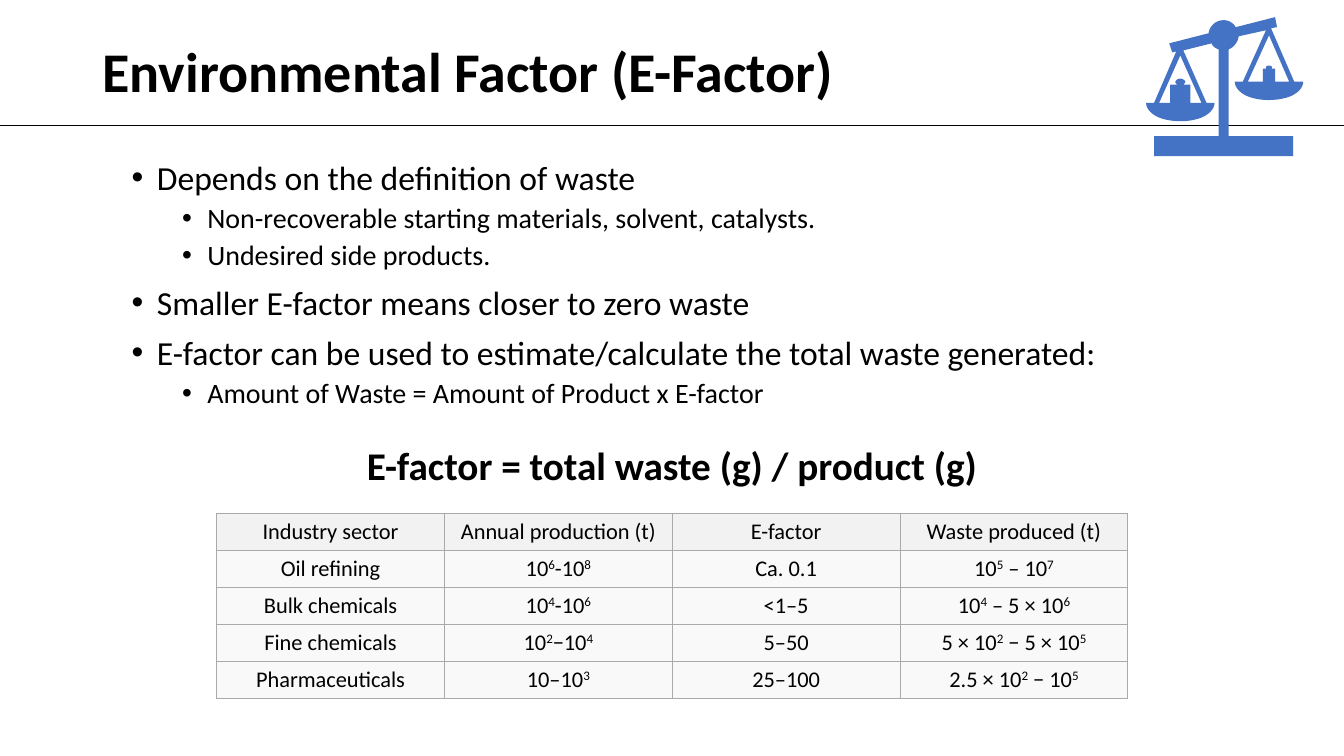
from lxml import etree
from pptx import Presentation
from pptx import util as u
from pptx.dml.color import RGBColor
from pptx.enum import shapes, text
from pptx.oxml.ns import qn

# Content
TITLE = "Environmental Factor (E-Factor)"
FORMULA = "E-factor = total waste (g) / product (g)"
BULLETS = [  # (level, wording)
    (0, "Depends on the definition of waste"),
    (1, "Non-recoverable starting materials, solvent, catalysts."),
    (1, "Undesired side products."),
    (0, "Smaller E-factor means closer to zero waste"),
    (0, "E-factor can be used to estimate/calculate the total waste generated:"),
    (1, "Amount of Waste = Amount of Product x E-factor"),
]
LEVELS = [  # size pt, space before pt, left indent cm
    (24, 10, 0.635),
    (20, 5, 1.905),
]
SECTORS = [  # text between ^ marks is superscript
    ("Industry sector", "Annual production (t)", "E-factor", "Waste produced (t)"),
    ("Oil refining", "10^6^-10^8^", "Ca. 0.1", "10^5^ – 10^7^"),
    ("Bulk chemicals", "10^4^-10^6^", "<1–5", "10^4^ – 5 × 10^6^"),
    ("Fine chemicals", "10^2^−10^4^", "5–50", "5 × 10^2^ − 5 × 10^5^"),
    ("Pharmaceuticals", "10–10^3^", "25–100", "2.5 × 10^2^ − 10^5^"),
]
COLORS = {"ink": "000000", "head": "F2F2F2", "row": "F9F9F9",
          "border": "AAAAAA", "scale": "4472C4"}
FONT = "Calibri"

# Balance scale in inches: pairs are corners, sextets are Bezier curves
FRAME = [
    (12.65, 0.17), (12.26, 0.27), (12.24, 0.23, 12.19, 0.2, 12.14, 0.2),
    (12.06, 0.2, 12, 0.26, 11.99, 0.33), (11.6, 0.43), (11.63, 0.52),
    (11.67, 0.51), (11.45, 1.02), (11.37, 1.02),
    (11.37, 1.08, 11.43, 1.15, 11.54, 1.18), (11.64, 1.21, 11.78, 1.21, 11.88, 1.18),
    (11.99, 1.15, 12.05, 1.08, 12.05, 1.02), (11.97, 1.02), (11.74, 0.5),
    (12.02, 0.43), (12.03, 0.46, 12.06, 0.48, 12.09, 0.49), (12.09, 1.35),
    (11.45, 1.35), (11.45, 1.55), (12.83, 1.55), (12.83, 1.35), (12.19, 1.35),
    (12.19, 0.49), (12.24, 0.47, 12.28, 0.42, 12.29, 0.36), (12.56, 0.3),
    (12.33, 0.81), (12.25, 0.81), (12.25, 0.87, 12.31, 0.94, 12.42, 0.97),
    (12.52, 1, 12.65, 1, 12.76, 0.97), (12.87, 0.94, 12.93, 0.87, 12.93, 0.81),
    (12.84, 0.81), (12.61, 0.28), (12.67, 0.27),
]
RIGHT_OPENING = [
    (12.59, 0.35), (12.79, 0.81), (12.65, 0.81), (12.65, 0.68), (12.61, 0.68),
    (12.62, 0.68, 12.62, 0.67, 12.62, 0.67), (12.62, 0.66, 12.61, 0.65, 12.59, 0.65),
    (12.57, 0.65, 12.56, 0.66, 12.56, 0.67), (12.56, 0.68, 12.56, 0.68, 12.57, 0.68),
    (12.53, 0.68), (12.53, 0.81), (12.38, 0.81),
]
LEFT_OPENING = [
    (11.71, 0.55), (11.92, 1.02), (11.81, 1.02), (11.81, 0.84), (11.74, 0.84),
    (11.75, 0.83, 11.76, 0.82, 11.76, 0.81), (11.75, 0.79, 11.73, 0.78, 11.71, 0.78),
    (11.68, 0.78, 11.66, 0.8, 11.66, 0.82), (11.66, 0.82, 11.67, 0.83, 11.68, 0.84),
    (11.61, 0.84), (11.61, 1.02), (11.5, 1.02),
]


def rgb(name):
    return RGBColor.from_string(COLORS[name])


def style(font, size, bold=False):
    font.name, font.size, font.bold = FONT, u.Pt(size), bold
    font.color.rgb = rgb("ink")


def add_box(page, left, top, width, height):
    box = page.shapes.add_textbox(u.Cm(left), u.Cm(top), u.Cm(width), u.Cm(height))
    box.text_frame.word_wrap = True
    return box.text_frame


def add_bullets(page):
    frame = add_box(page, 3.07, 3.94, 24.87, 6.58)
    frame.text = "\n".join(wording for _, wording in BULLETS)
    for index, (para, (level, _)) in enumerate(zip(frame.paragraphs, BULLETS)):
        size, before, indent = LEVELS[level]
        para.level = level
        para.line_spacing = 0.9
        para.space_before = u.Pt(before if index else 0)
        props = para._p.get_or_add_pPr()
        props.set("marL", str(u.Cm(indent)))
        props.set("indent", str(-u.Cm(0.635)))
        etree.SubElement(props, qn("a:buFont"), typeface="Arial")
        etree.SubElement(props, qn("a:buChar"), char="•")
        for span in para.runs:
            style(span.font, size)


def add_borders(cell):
    props = cell._tc.get_or_add_tcPr()
    for place, side in enumerate(("lnL", "lnR", "lnT", "lnB")):
        line = etree.Element(qn("a:" + side), w=str(u.Pt(0.6)))
        fill = etree.SubElement(line, qn("a:solidFill"))
        etree.SubElement(fill, qn("a:srgbClr"), val=COLORS["border"])
        props.insert(place, line)


def fill_cell(cell, wording, fill):
    cell.fill.solid()
    cell.fill.fore_color.rgb = rgb(fill)
    cell.vertical_anchor = text.MSO_ANCHOR.MIDDLE
    cell.margin_top = cell.margin_bottom = 0
    para = cell.text_frame.paragraphs[0]
    para.alignment = text.PP_ALIGN.CENTER
    for index, part in enumerate(wording.split("^")):
        if part:
            span = para.add_run()
            span.text = part
            style(span.font, 16)
            if index % 2:
                span.font._element.set("baseline", "30000")
    add_borders(cell)


def add_sectors(page):
    rows, columns = len(SECTORS), len(SECTORS[0])
    table = page.shapes.add_table(rows, columns, u.Cm(5.46), u.Cm(12.94),
                                  u.Cm(5.74 * columns), u.Cm(0.93 * rows)).table
    for r, record in enumerate(SECTORS):
        for c, wording in enumerate(record):
            fill_cell(table.cell(r, c), wording, "row" if r else "head")


def flatten(outline, steps=8):
    """Turn corners and Bezier curves into points in EMU."""
    points = []
    for item in outline:
        if len(item) == 2:
            points.append(item)
            continue
        (x0, y0), (x1, y1, x2, y2, x3, y3) = points[-1], item
        for step in range(1, steps + 1):
            t = step / steps
            a, b, c, d = (1 - t) ** 3, 3 * t * (1 - t) ** 2, 3 * t * t * (1 - t), t ** 3
            points.append((a * x0 + b * x1 + c * x2 + d * x3,
                           a * y0 + b * y1 + c * y2 + d * y3))
    return [(u.Cm(x * 2.54), u.Cm(y * 2.54)) for x, y in points]


def add_scale(page):
    first, *openings = map(flatten, (FRAME, RIGHT_OPENING, LEFT_OPENING))
    builder = page.shapes.build_freeform(*first[0])
    builder.add_line_segments(first[1:])
    for opening in openings:
        builder.move_to(*opening[0])
        builder.add_line_segments(opening[1:])
    scale = builder.convert_to_shape()
    scale.shadow.inherit = False
    scale.fill.solid()
    scale.fill.fore_color.rgb = rgb("scale")
    scale.line.fill.background()


def main():
    deck = Presentation()
    deck.slide_width, deck.slide_height = u.Cm(33.867), u.Cm(19.05)
    page = deck.slides.add_slide(deck.slide_layouts[6])

    add_bullets(page)
    add_sectors(page)

    # Formula
    frame = add_box(page, 8.46, 11, 16.94, 1.45)
    frame.text = FORMULA
    frame.paragraphs[0].alignment = text.PP_ALIGN.CENTER
    style(frame.paragraphs[0].runs[0].font, 28, True)

    # Rule under the title
    rule = page.shapes.add_connector(shapes.MSO_CONNECTOR.STRAIGHT, 0, u.Cm(3.15),
                                     deck.slide_width, u.Cm(3.15))
    rule.line.color.rgb = rgb("ink")
    rule.line.width = u.Pt(0.5)
    etree.SubElement(rule._element.spPr, qn("a:effectLst"))

    # Title
    frame = add_box(page, 2.33, 0.03, 29.21, 3.68)
    frame.text = TITLE
    frame.vertical_anchor = text.MSO_ANCHOR.MIDDLE
    frame.paragraphs[0].line_spacing = 0.9
    style(frame.paragraphs[0].runs[0].font, 40, True)

    add_scale(page)
    deck.save("out.pptx")


if __name__ == "__main__":
    main()
